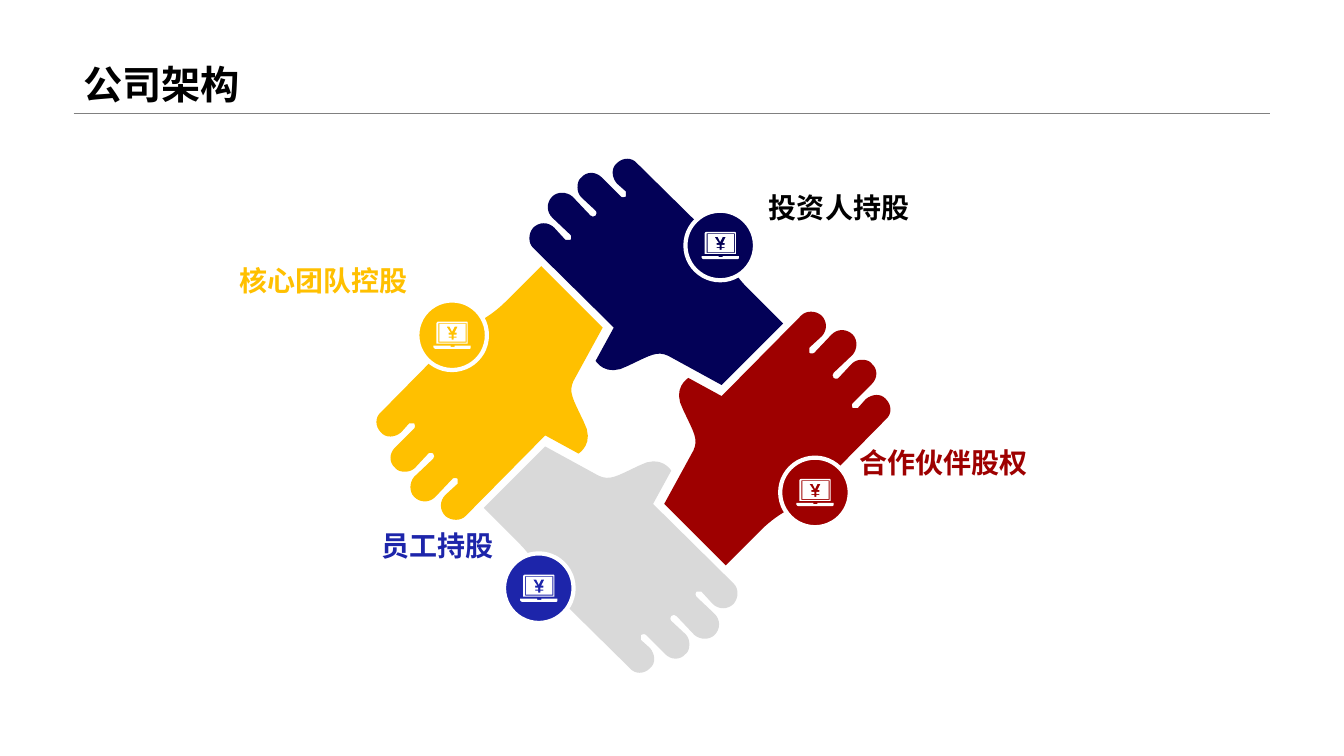
import pptx
import pptx.dml.color
import pptx.enum.shapes
import pptx.enum.text
import pptx.util
from lxml import etree

UNIT = 0.72
PIVOT = (148.5, -30.5)
HAND = [[
    (114, 29), (125, 34, 131, 30, 154, 19), (176, 7, 186, 24, 186, 24),
    (168, 57), (248, 136), (253, 141, 253, 150, 248, 156),
    (242, 162, 233, 162, 227, 156), (216, 144), (214, 144), (211, 144),
    (210, 145, 210, 148, 211, 149), (229, 166), (235, 172, 235, 181, 229, 187),
    (224, 192, 215, 192, 209, 187), (191, 168), (190, 168, 189, 167, 189, 167),
    (188, 167, 187, 168, 186, 168), (185, 170, 185, 172, 186, 173), (200, 186),
    (203, 189, 204, 193, 204, 196), (204, 200, 203, 204, 200, 206),
    (195, 212, 186, 212, 180, 206), (161, 187), (160, 186, 158, 186, 156, 187),
    (156, 190), (156, 192), (165, 200), (170, 206, 171, 215, 165, 220),
    (159, 226, 150, 226, 145, 220), (77, 153), (69, 145, 62, 136, 57, 126),
    (51, 115, 44, 105, 36, 97), (0, 61), (61, 0),
]]
LAPTOP = [
    [(0, 24), (17, 24), (17, 25), (21, 25), (21, 24), (37, 24), (37, 25),
     (37, 26, 37, 27, 36, 27), (2, 27), (1, 27, 0, 26, 0, 25)],
    [(13, 5), (17, 11), (15, 11), (15, 13), (18, 13), (18, 15), (15, 15), (15, 16),
     (18, 16), (18, 18), (20, 18), (20, 16), (23, 16), (23, 15), (20, 15), (20, 13),
     (23, 13), (23, 11), (21, 11), (24, 5), (21, 5), (18.5, 10), (16, 5)],
    [(6, 2.3), (32, 2.3), (32, 20), (6, 20)],
    [(5, 1.5), (33, 1.5), (33, 21), (5, 21)],
    [(5, 0), (33, 0), (34, 0, 34, 1, 34, 2), (34, 22), (3, 22), (3, 2),
     (3, 1, 4, 0, 5, 0)],
]
HANDS = ["D9D9D9", "FFC000", "030157", "9E0000"]
BADGES = [
    ((489.6, 150.5), "030157"),
    ((557.3, 326.9), "9E0000"),
    ((360, 395.3), "1D25AA"),
    ((298.1, 214.6), "FFC000"),
]
LABELS = [
    ("核心团队控股", (0, 185, 298.1, 33.1), "FFC000", "RIGHT"),
    ("员工持股", (0, 373.7, 360, 33.1), "1D25AA", "RIGHT"),
    ("投资人持股", (542.2, 132.5, 369.4, 33.1), "000000", "LEFT"),
    ("合作伙伴股权", (607, 314.6, 304.6, 33.1), "9E0000", "LEFT"),
]


def rgb(value):
    """Turn a hex string into a colour."""
    return pptx.dml.color.RGBColor.from_string(value)


def points(box):
    """Turn numbers into lengths in points."""
    return [pptx.util.Pt(v) for v in box]


def flatten(outline, steps=8):
    """Turn corners and cubic curves into a list of points."""
    pts = []
    for seg in outline:
        if len(seg) == 2:
            pts.append(seg)
            continue
        ctrl = [pts[-1], seg[:2], seg[2:4], seg[4:]]
        for i in range(1, steps + 1):
            t = i / steps
            w = [(1 - t) ** 3, 3 * t * (1 - t) ** 2, 3 * t * t * (1 - t), t ** 3]
            pts.append(tuple(sum(k * c[a] for k, c in zip(w, ctrl)) for a in (0, 1)))
    return pts


def paint(sp, fill, line=None):
    """Give a shape a plain fill and an optional outline."""
    sp.shadow.inherit = False
    sp.fill.solid()
    sp.fill.fore_color.rgb = rgb(fill)
    if line:
        sp.line.color.rgb = rgb(line)
        sp.line.width = pptx.util.Pt(3)
    else:
        sp.line.fill.background()


def freeform(s, outlines, place, fill):
    """Draw closed outlines as one shape, with place mapping units to points."""
    fb = None
    for outline in outlines:
        pts = [points(place(x, y)) for x, y in flatten(outline)]
        if fb is None:
            fb = s.shapes.build_freeform(*pts[0], scale=1.0)
        else:
            fb.move_to(*pts[0])
        fb.add_line_segments(pts[1:], close=True)
    paint(fb.convert_to_shape(), fill)


def text(s, box, words, size, color, align="LEFT", anchor="TOP", spacing=1.0):
    """Add a bold one-paragraph text box."""
    tf = s.shapes.add_textbox(*points(box)).text_frame
    tf.word_wrap = True
    tf.vertical_anchor = getattr(pptx.enum.text.MSO_ANCHOR, anchor)
    p = tf.paragraphs[0]
    p.alignment = getattr(pptx.enum.text.PP_ALIGN, align)
    p.line_spacing = spacing
    r = p.add_run()
    r.text = words
    for key, value in {"name": "Arial", "size": pptx.util.Pt(size), "bold": True}.items():
        setattr(r.font, key, value)
    r.font.color.rgb = rgb(color)


def header(s, box, words):
    """Place the title above its rule."""
    x, y, w, h = box
    line = s.shapes.add_connector(
        pptx.enum.shapes.MSO_CONNECTOR.STRAIGHT, *points((x, y + h, x + w, y + h)))
    line.line.color.rgb = rgb("808080")
    line.line.width = pptx.util.Pt(0.25)
    etree.SubElement(line._element.spPr, pptx.oxml.ns.qn("a:effectLst"))
    text(s, box, words, 28, "000000", anchor="BOTTOM", spacing=0.9)


def hand_ring(s, box):
    """Place four hands, each a quarter turn on from the last."""
    x, y, w, h = box
    for turns, fill in enumerate(HANDS):
        def place(px, py):
            """Turn a hand point about the centre of the ring."""
            dx, dy = px - PIVOT[0], py - PIVOT[1]
            for _ in range(turns):
                dx, dy = -dy, dx
            return x + w / 2 + dx * UNIT, y + h / 2 + dy * UNIT
        freeform(s, HAND, place, fill)


def badge(s, box, fill):
    """Place a round badge with a laptop in it."""
    x, y, w, h = box
    sp = s.shapes.add_shape(pptx.enum.shapes.MSO_SHAPE.OVAL, *points(box))
    paint(sp, fill, "FFFFFF")
    left, top = x + (w - 37 * UNIT) / 2, y + (h - 27 * UNIT) / 2
    freeform(s, LAPTOP, lambda px, py: (left + px * UNIT, top + py * UNIT), "FFFFFF")


def main():
    """Build and save the slide."""
    prs = pptx.Presentation()
    prs.slide_width, prs.slide_height = points((960, 540))
    s = prs.slides.add_slide(prs.slide_layouts[6])
    header(s, (52.6, 0, 854.6, 80.6), "公司架构")
    hand_ring(s, (268.5, 113, 368, 368))
    for corner, fill in BADGES:
        badge(s, (*corner, 49.7, 49.7), fill)
    for words, box, color, align in LABELS:
        text(s, box, words, 20, color, align)
    prs.save("out.pptx")


if __name__ == "__main__":
    main()
